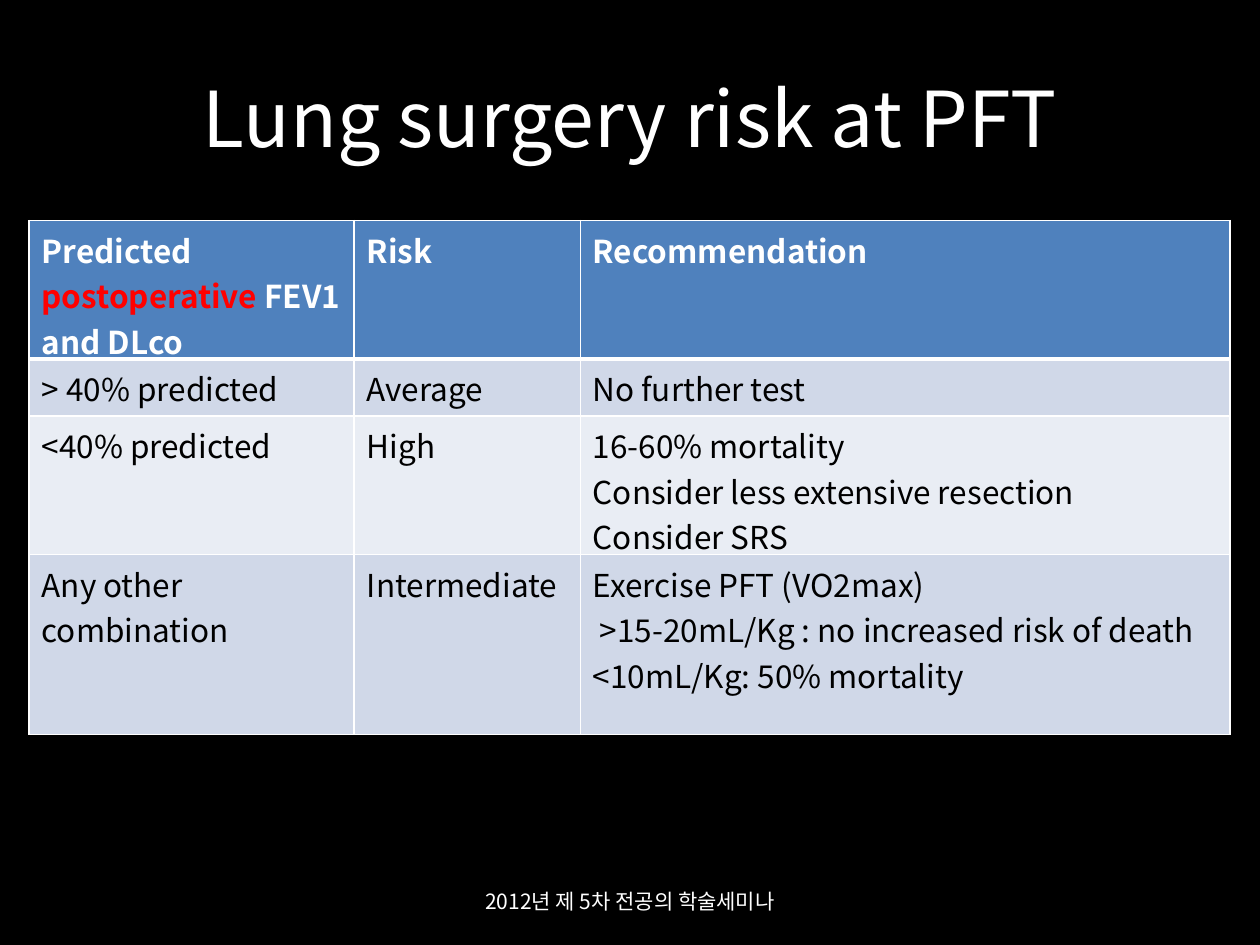
from dataclasses import dataclass

from lxml import etree
from pptx import Presentation
from pptx.dml.color import RGBColor
from pptx.enum.text import MSO_ANCHOR, PP_ALIGN
from pptx.oxml.ns import qn
from pptx.util import Pt

MIDDLE = MSO_ANCHOR.MIDDLE
CENTER = PP_ALIGN.CENTER


@dataclass(frozen=True)
class Theme:
    font: str = "Noto Sans CJK KR"
    background: str = "000000"
    light: str = "FFFFFF"
    dark: str = "000000"
    accent: str = "FF0000"
    header: str = "4F81BD"
    bands: tuple = ("D0D8E8", "E9EDF4")
    title_size: int = 44
    table_size: int = 18
    footer_size: int = 12
    border: int = 1
    header_border: int = 3


class Deck:
    def __init__(self, prs, theme):
        self.theme = theme
        self.s = prs.slides.add_slide(prs.slide_layouts[6])
        fill = self.s.background.fill
        fill.solid()
        fill.fore_color.rgb = RGBColor.from_string(theme.background)

    def style(self, p, size, color, bold=False):
        f = p.font
        f.name, f.size, f.bold = self.theme.font, Pt(size), bold
        f.color.rgb = RGBColor.from_string(color)

    def text(self, text, left, top, width, height, size):
        box = self.s.shapes.add_textbox(Pt(left), Pt(top), Pt(width), Pt(height))
        tf = box.text_frame
        tf.word_wrap = True
        tf.vertical_anchor = MIDDLE
        p = tf.paragraphs[0]
        p.text = text
        p.alignment = CENTER
        self.style(p, size, self.theme.light)

    def borders(self, cell, bottom):
        tc_pr = cell._tc.get_or_add_tcPr()
        t = self.theme
        for side, width in (("L", t.border), ("R", t.border), ("T", t.border), ("B", bottom)):
            ln = etree.SubElement(tc_pr, qn(f"a:ln{side}"), w=str(Pt(width)))
            fill = etree.SubElement(ln, qn("a:solidFill"))
            etree.SubElement(fill, qn("a:srgbClr"), val=t.light)

    def cell(self, cell, lines, row, accent):
        t = self.theme
        is_header = row == 0
        self.borders(cell, t.header_border if is_header else t.border)
        cell.fill.solid()
        color = t.header if is_header else t.bands[(row - 1) % len(t.bands)]
        cell.fill.fore_color.rgb = RGBColor.from_string(color)
        tf = cell.text_frame
        for i, line in enumerate(lines.split("\n")):
            p = tf.add_paragraph() if i else tf.paragraphs[0]
            before, word, after = line.partition(accent)
            for part in filter(None, (before, word, after)):
                r = p.add_run()
                r.text = part
                if part == accent:
                    r.font.color.rgb = RGBColor.from_string(t.accent)
            self.style(p, t.table_size, t.light if is_header else t.dark, is_header)

    def table(self, rows, left, top, widths, heights, accent):
        frame = self.s.shapes.add_table(
            len(rows), len(widths), Pt(left), Pt(top), Pt(sum(widths)), Pt(sum(heights)))
        table = frame.table
        table.horz_banding = False
        for column, width in zip(table.columns, widths):
            column.width = Pt(width)
        for i, (row, height) in enumerate(zip(rows, heights)):
            table.rows[i].height = Pt(height)
            for j, lines in enumerate(row):
                self.cell(table.cell(i, j), lines, i, accent)


ROWS = [
    ("Predicted postoperative FEV1 and DLco", "Risk", "Recommendation"),
    ("> 40% predicted", "Average", "No further test"),
    ("<40% predicted", "High",
     "16-60% mortality\nConsider less extensive resection\nConsider SRS"),
    ("Any other combination", "Intermediate",
     "Exercise PFT (VO2max)\n >15-20mL/Kg : no increased risk of death\n"
     "<10mL/Kg: 50% mortality"),
]


def main():
    prs = Presentation()
    prs.slide_width, prs.slide_height = Pt(720), Pt(540)
    theme = Theme()
    deck = Deck(prs, theme)
    deck.text("Lung surgery risk at PFT", 36, 21.6, 648, 90, theme.title_size)
    deck.table(ROWS, 16.6, 126, (185.8, 129.2, 371.4), (79.2, 32.4, 79.2, 103),
               "postoperative")
    deck.text("2012년 제 5차 전공의 학술세미나", 246, 500.4, 228, 28.8, theme.footer_size)
    prs.save("out.pptx")


if __name__ == "__main__":
    main()
